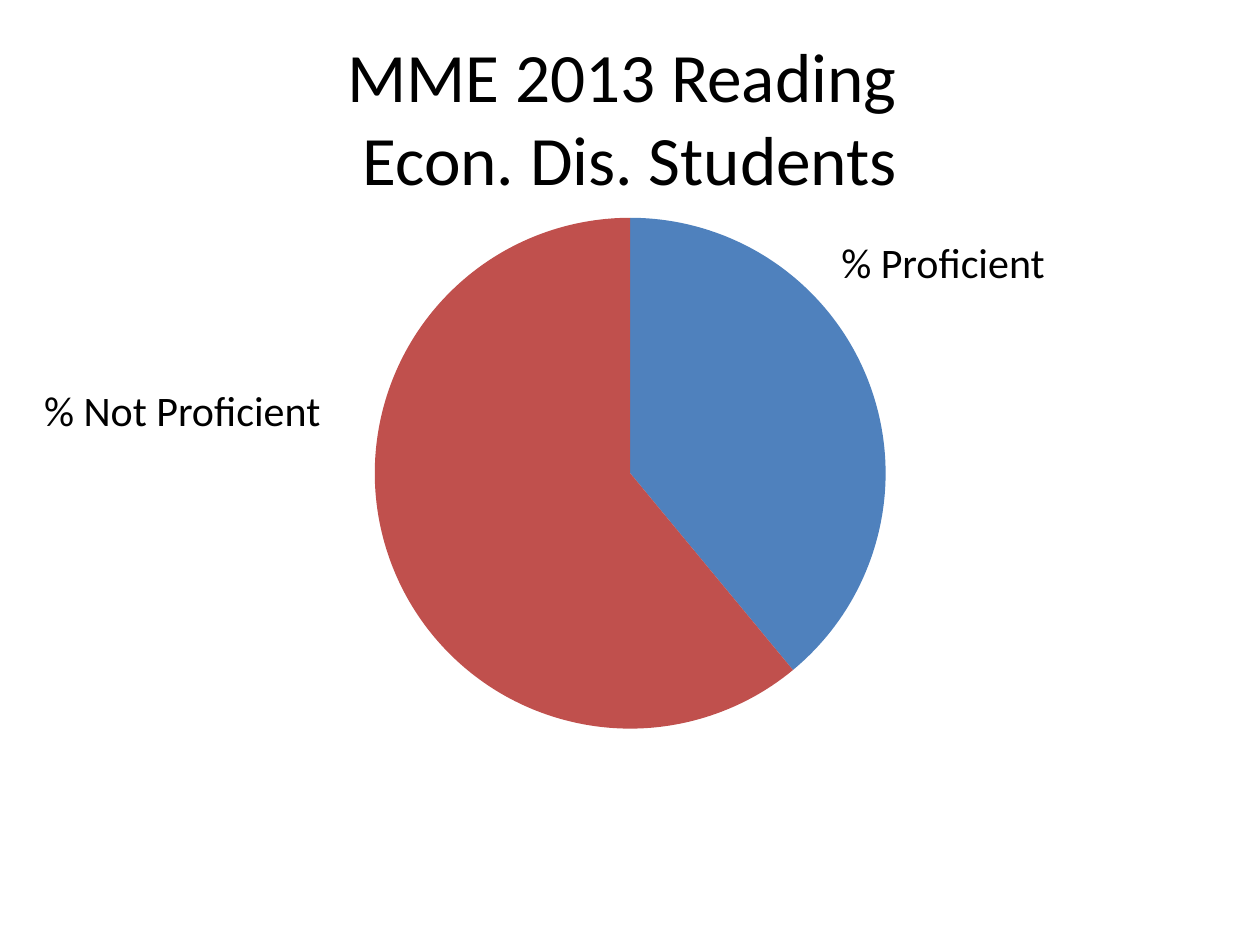
"""Build a slide with a pie chart of reading proficiency."""
from dataclasses import dataclass

from pptx import Presentation
from pptx.chart.data import CategoryChartData
from pptx.dml.color import RGBColor
from pptx.enum.chart import XL_CHART_TYPE
from pptx.enum.text import MSO_ANCHOR, PP_ALIGN
from pptx.slide import Slide
from pptx.util import Cm, Pt

PIE = XL_CHART_TYPE.PIE
LEFT, CENTER = PP_ALIGN.LEFT, PP_ALIGN.CENTER
TOP, MIDDLE = MSO_ANCHOR.TOP, MSO_ANCHOR.MIDDLE
BLACK = RGBColor(0x00, 0x00, 0x00)
BLUE = RGBColor(0x4F, 0x81, 0xBD)
RED = RGBColor(0xC0, 0x50, 0x4D)
FONT = "Calibri"


@dataclass(frozen=True)
class Box:
    left: float
    top: float
    width: float
    height: float

    def lengths(self) -> tuple[Cm, Cm, Cm, Cm]:
        return Cm(self.left), Cm(self.top), Cm(self.width), Cm(self.height)


@dataclass(frozen=True)
class Slice:
    category: str
    label: str
    value: int
    color: RGBColor
    label_box: Box


TITLE_BOX = Box(1.27, 0.76, 22.86, 3.18)
CHART_BOX = Box(4.78, 4.04, 15.85, 11)
SLICES = (
    Slice("1", "% Proficient", 39, BLUE, Box(16.71, 4.65, 7.42, 1.27)),
    Slice("2", "% Not Proficient", 61, RED, Box(0.64, 7.62, 6.55, 1.27)),
)


def add_text(s: Slide, text: str, box: Box, *, size: float = 24,
             align: PP_ALIGN = LEFT, anchor: MSO_ANCHOR = TOP) -> None:
    tf = s.shapes.add_textbox(*box.lengths()).text_frame
    tf.word_wrap = True
    tf.vertical_anchor = anchor
    p = tf.paragraphs[0]
    p.text = text
    p.alignment = align
    p.font.name = FONT
    p.font.size = Pt(size)
    p.font.color.rgb = BLACK
    for r in p.runs:
        r.font.name = FONT
        r.font.size = Pt(size)
        r.font.color.rgb = BLACK


def add_pie(s: Slide, slices: tuple[Slice, ...], box: Box) -> None:
    data = CategoryChartData()
    data.categories = [part.category for part in slices]
    data.add_series("Series 1", [part.value for part in slices])
    chart = s.shapes.add_chart(PIE, *box.lengths(), data).chart
    chart.has_title = False
    chart.has_legend = False
    chart.font.name = FONT
    chart.font.size = Pt(10)
    chart.font.color.rgb = BLACK
    plot = chart.plots[0]
    plot.vary_by_categories = True
    for i, part in enumerate(slices):
        fill = plot.series[0].points[i].format.fill
        fill.solid()
        fill.fore_color.rgb = part.color


def main() -> None:
    prs = Presentation()
    prs.slide_width, prs.slide_height = Cm(25.4), Cm(19.05)
    s = prs.slides.add_slide(prs.slide_layouts[6])
    add_text(s, "MME 2013 Reading \vEcon. Dis. Students", TITLE_BOX,
             size=39.6, align=CENTER, anchor=MIDDLE)
    for part in SLICES:
        add_text(s, part.label, part.label_box)
    add_pie(s, SLICES, CHART_BOX)
    prs.save("out.pptx")


if __name__ == "__main__":
    main()
